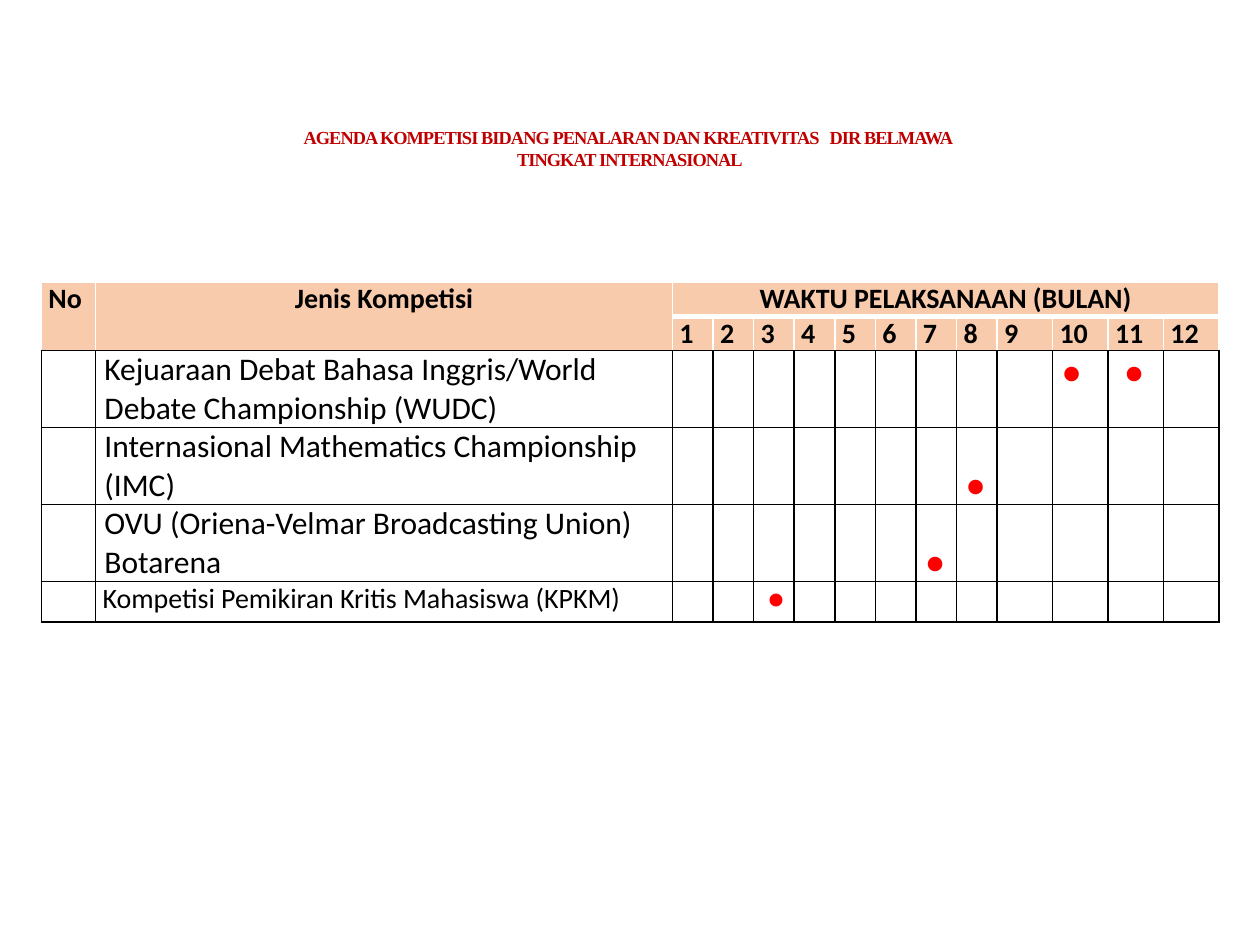
from dataclasses import dataclass
from typing import Optional

from lxml import etree
from pptx import Presentation
from pptx.dml.color import RGBColor
from pptx.enum import text
from pptx.oxml.ns import qn
from pptx.util import Pt


@dataclass(frozen=True)
class Theme:
    title_font: str = "Times New Roman"
    body_font: str = "Calibri"
    title: str = "C00000"
    ink: str = "000000"
    dot: str = "FF0000"
    header: str = "F8CBAD"
    header_line: str = "FFFFFF"
    title_size: float = 10.5
    header_size: float = 16
    body_size: float = 18


@dataclass(frozen=True)
class Dot:
    """A red mark in one month, indented from the left cell edge."""
    month: int
    indent: float
    at_bottom: bool = False


@dataclass(frozen=True)
class Competition:
    name: str
    size: float
    inset: float
    height: float
    dots: tuple[Dot, ...]


@dataclass(frozen=True)
class Line:
    color: str
    width: float = 1


THEME = Theme()
TITLE = ("AGENDA KOMPETISI BIDANG PENALARAN DAN KREATIVITAS   DIR BELMAWA ",
         "TINGKAT INTERNASIONAL")
COMPETITIONS = (
    Competition("Kejuaraan Debat Bahasa Inggris/World Debate Championship (WUDC)",
                THEME.body_size, 5, 44, (Dot(10, 5.5), Dot(11, 9.5))),
    Competition("Internasional Mathematics Championship (IMC)",
                THEME.body_size, 5, 44, (Dot(8, 5.5, True),)),
    Competition("OVU (Oriena-Velmar Broadcasting Union) Botarena",
                THEME.body_size, 5, 44, (Dot(7, 5.5, True),)),
    Competition("Kompetisi Pemikiran Kritis Mahasiswa (KPKM)",
                THEME.header_size, 4, 23, (Dot(3, 8),)),
)
MONTHS = 12
FIRST_MONTH = 2  # column of month 1
COLUMNS = [31, 329.6] + [23.2] * 8 + [31.7] * 4
HEADER_ROWS = [19.5, 19.5]
BLACK, WHITE, THICK_WHITE = Line(THEME.ink), Line(THEME.header_line), Line(THEME.header_line, 3)


def set_borders(cell, left: Line, right: Line, top: Line, bottom: Line) -> None:
    tc_pr = cell._tc.get_or_add_tcPr()
    for tag, line in zip(("lnL", "lnR", "lnT", "lnB"), (left, right, top, bottom)):
        ln = etree.SubElement(tc_pr, qn(f"a:{tag}"), w=str(Pt(line.width)))
        fill = etree.SubElement(ln, qn("a:solidFill"))
        etree.SubElement(fill, qn("a:srgbClr"), val=line.color)


def set_text(cell, words: str, size: float, color: str = THEME.ink, bold: bool = False,
             align: Optional[text.PP_ALIGN] = None, inset: float = 4) -> None:
    cell.margin_left = cell.margin_right = Pt(inset)
    p = cell.text_frame.paragraphs[0]
    p.text, p.alignment = words, align
    f = p.font
    f.name, f.size, f.bold = THEME.body_font, Pt(size), bold
    f.color.rgb = RGBColor.from_string(color)


def put_dot(cell, dot: Dot, size: float) -> None:
    set_text(cell, "●", size, THEME.dot)
    cell.margin_left, cell.margin_right = Pt(dot.indent), 0
    if dot.at_bottom:
        cell.vertical_anchor = text.MSO_ANCHOR.BOTTOM
    elif size == THEME.body_size:
        cell.text_frame.paragraphs[0].line_spacing = 1.07


def add_title(s) -> None:
    sp = s.shapes.title
    sp.left, sp.top, sp.width, sp.height = Pt(34), Pt(68.4), Pt(652), Pt(74)
    tf = sp.text_frame
    tf.word_wrap = False
    tf.auto_size = text.MSO_AUTO_SIZE.NONE
    tf.vertical_anchor = text.MSO_ANCHOR.TOP
    tf.text = "\n".join(TITLE)
    for p in tf.paragraphs:
        p.alignment = text.PP_ALIGN.CENTER
        f = p.font
        f.name, f.size, f.bold = THEME.title_font, Pt(THEME.title_size), True
        f.color.rgb = RGBColor.from_string(THEME.title)
        for r in p.runs:
            r._r.get_or_add_rPr().set("spc", "-50")


def format_grid(table) -> None:
    for i, row in enumerate(table.rows):
        for j, cell in enumerate(row.cells):
            cell.margin_top = cell.margin_bottom = 0
            if i >= len(HEADER_ROWS):
                set_borders(cell, BLACK, BLACK, BLACK, BLACK)
                cell.fill.background()
                continue
            over_months = j >= FIRST_MONTH
            top = THICK_WHITE if i == 1 and over_months else WHITE
            bottom = THICK_WHITE if i == 0 and over_months else BLACK
            set_borders(cell, WHITE, WHITE, top, bottom)
            cell.fill.solid()
            cell.fill.fore_color.rgb = RGBColor.from_string(THEME.header)


def add_agenda(s) -> None:
    heights = HEADER_ROWS + [c.height for c in COMPETITIONS]
    frame = s.shapes.add_table(len(heights), len(COLUMNS), Pt(23.7), Pt(161.2),
                               Pt(sum(COLUMNS)), Pt(sum(heights)))
    table = frame.table
    table.first_row = table.horz_banding = False
    for column, width in zip(table.columns, COLUMNS):
        column.width = Pt(width)
    for row, height in zip(table.rows, heights):
        row.height = Pt(height)
    format_grid(table)

    # Header: two tall cells, one wide cell, month numbers
    for j in range(FIRST_MONTH):
        table.cell(0, j).merge(table.cell(1, j))
    table.cell(0, FIRST_MONTH).merge(table.cell(0, len(COLUMNS) - 1))
    center = text.PP_ALIGN.CENTER
    for j, (words, align) in enumerate((("No", None), ("Jenis Kompetisi", center),
                                        ("WAKTU PELAKSANAAN (BULAN)", center))):
        set_text(table.cell(0, j), words, THEME.header_size, bold=True, align=align)
    for month in range(1, MONTHS + 1):
        set_text(table.cell(1, FIRST_MONTH + month - 1), str(month),
                 THEME.header_size, bold=True)

    # Competitions and the months they run in
    for i, item in enumerate(COMPETITIONS, len(HEADER_ROWS)):
        set_text(table.cell(i, 1), item.name, item.size, inset=item.inset)
        for dot in item.dots:
            put_dot(table.cell(i, FIRST_MONTH + dot.month - 1), dot, item.size)


def main() -> None:
    prs = Presentation()
    prs.slide_width, prs.slide_height = Pt(720), Pt(540)
    s = prs.slides.add_slide(prs.slide_layouts[5])  # title only
    add_agenda(s)
    add_title(s)
    prs.save("out.pptx")


if __name__ == "__main__":
    main()
